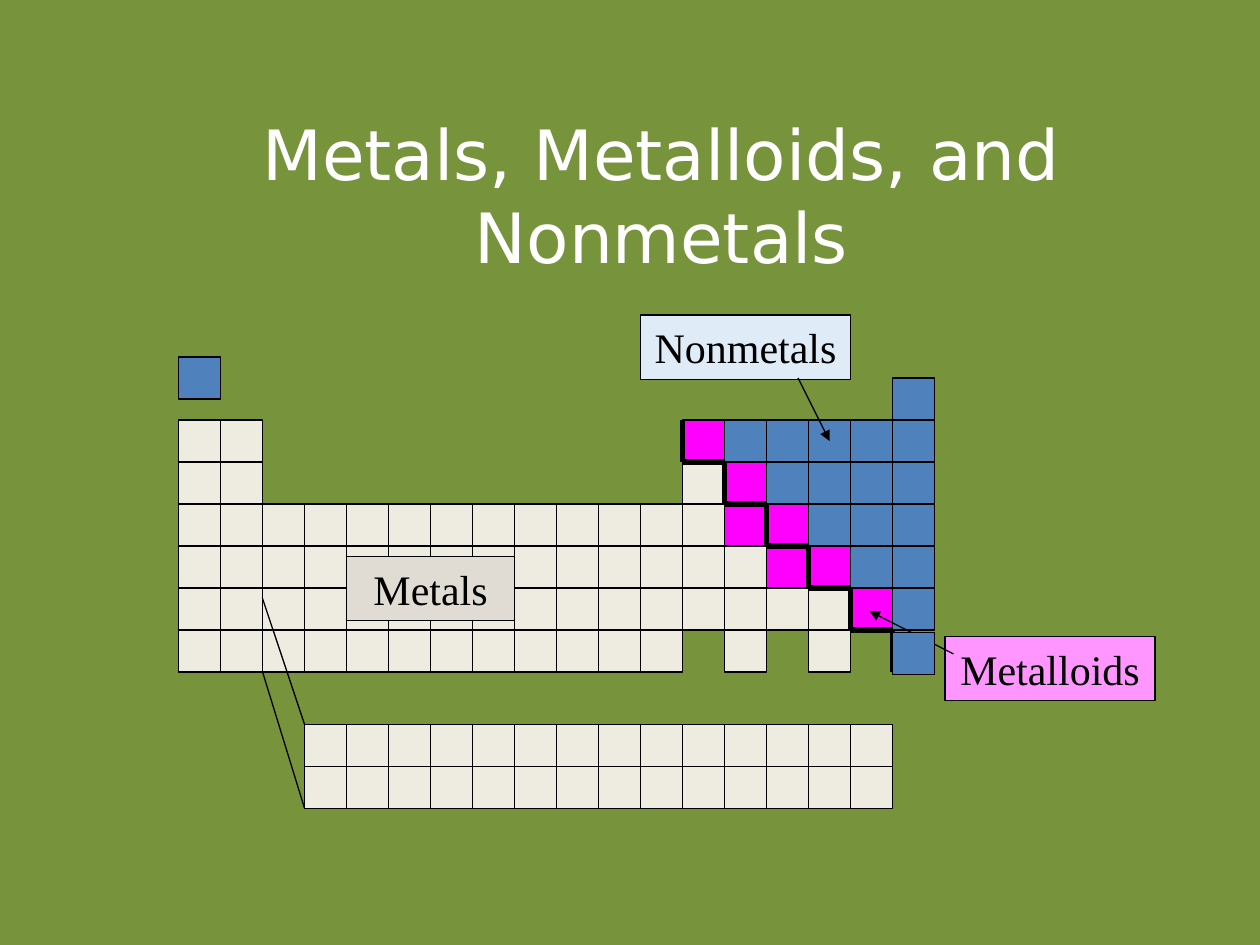
from collections import namedtuple
from dataclasses import dataclass

from lxml import etree
from pptx import Presentation
from pptx import util as u
from pptx.dml import color as c
from pptx.enum import shapes as s
from pptx.enum import text as t
from pptx.oxml import ns

Box = namedtuple("Box", "x y w h")


@dataclass(frozen=True)
class Theme:
    back: str = "77933C"
    ink: str = "000000"
    light: str = "FFFFFF"
    metal: str = "EEECE1"
    semi: str = "FF00FF"
    non: str = "4F81BD"
    metal_tag: str = "E0DCD4"
    semi_tag: str = "FF96FF"
    non_tag: str = "DFEBF7"
    head: float = 39.6
    body: float = 24
    thin: float = 0.75
    thick: float = 3
    sans: str = "DejaVu Sans"
    serif: str = "Times New Roman"


THEME = Theme()
CELL = 2.54 / 3
KINDS = {"M": THEME.metal, "L": THEME.semi, "N": THEME.non}
ROWS = [
    "." * 17 + "N",
    "MM" + "." * 10 + "LNNNNN",
    "MM" + "." * 10 + "MLNNNN",
    "M" * 13 + "LLNNN",
    "M" * 14 + "LLNN",
    "M" * 16 + "LN",
    "M" * 12 + ".M.M..",
]


def rgb(code):
    return c.RGBColor.from_string(code)


def style(item, values):
    for name, value in values.items():
        setattr(item, name, value)


def within(box, col, row, wide=1, high=1):
    return Box(box.x + col * CELL, box.y + row * CELL, wide * CELL, high * CELL)


def write(frame, words, size, face, tone):
    style(frame, {"word_wrap": True, "vertical_anchor": t.MSO_ANCHOR.MIDDLE})
    para = frame.paragraphs[0]
    para.alignment = t.PP_ALIGN.CENTER
    run = para.add_run()
    run.text = words
    style(run.font, {"size": u.Pt(size), "name": face})
    run.font.color.rgb = rgb(tone)


def block(parts, box, tone):
    shape = parts.add_shape(s.MSO_SHAPE.RECTANGLE, *map(u.Cm, box))
    shape.shadow.inherit = False
    shape.fill.solid()
    shape.fill.fore_color.rgb = rgb(tone)
    shape.line.color.rgb = rgb(THEME.ink)
    shape.line.width = u.Pt(THEME.thin)
    return shape


def stroke(parts, box, start, end, width=THEME.thin, arrow=False):
    ends = [within(box, *spot)[:2] for spot in (start, end)]
    line = parts.add_connector(s.MSO_CONNECTOR.STRAIGHT, *map(u.Cm, ends[0] + ends[1]))
    line.line.color.rgb = rgb(THEME.ink)
    line.line.width = u.Pt(width)
    if arrow:
        tip = etree.SubElement(line.line._get_or_add_ln(), ns.qn("a:tailEnd"))
        tip.set("type", "triangle")
    etree.SubElement(line._element.spPr, ns.qn("a:effectLst"))


def title(parts, box):
    area = parts.add_textbox(*map(u.Cm, box))
    write(area.text_frame, "Metals, Metalloids, and Nonmetals", THEME.head, THEME.sans, THEME.light)


def grid(parts, box, rows):
    for row, line in enumerate(rows):
        for col, kind in enumerate(line):
            if kind in KINDS:
                block(parts, within(box, col, row), KINDS[kind])


def series(parts, box):
    grid(parts, box, ["M" * 14] * 2)
    stroke(parts, box, (0, 0), (-1, -3))
    stroke(parts, box, (0, 2), (-1, -1.25))


def stairs(parts, box):
    group = parts.add_group_shape().shapes
    for step in range(6):
        corner = (step, step + 1)
        stroke(group, box, (step, step), corner, THEME.thick)
        stroke(group, box, corner, (step + 1, step + 1), THEME.thick)


def tag(parts, box, words, tone, arrow=None):
    shape = block(parts, box, tone)
    write(shape.text_frame, words, THEME.body, THEME.serif, THEME.ink)
    if arrow:
        stroke(parts, box, *arrow, arrow=True)


def table(parts, box):
    block(parts, within(box, 0, -0.5), THEME.non)
    grid(parts, box, ROWS)
    series(parts, within(box, 3, 8.25))
    stairs(parts, within(box, 12, 1))
    tag(parts, within(box, 4, 4.25, 4, 1.53), "Metals", THEME.metal_tag)
    tag(parts, within(box, 18.25, 6.15, 5, 1.53), "Metalloids", THEME.semi_tag,
        ((0.2, 0.42), (-1.8, -0.6)))
    tag(parts, within(box, 11, -1.5, 5, 1.53), "Nonmetals", THEME.non_tag,
        ((3.75, 1.5), (4.5, 3)))
    block(parts, within(box, 17, 6.06), THEME.non)


def main():
    deck = Presentation()
    style(deck, {"slide_width": u.Cm(25.4), "slide_height": u.Cm(19.05)})
    slide = deck.slides.add_slide(deck.slide_layouts[6])
    slide.background.fill.solid()
    slide.background.fill.fore_color.rgb = rgb(THEME.back)
    title(slide.shapes, Box(2.12, 2.33, 22.43, 3.18))
    table(slide.shapes, Box(3.6, 7.62, 18 * CELL, 7 * CELL))
    deck.save("out.pptx")


if __name__ == "__main__":
    main()
